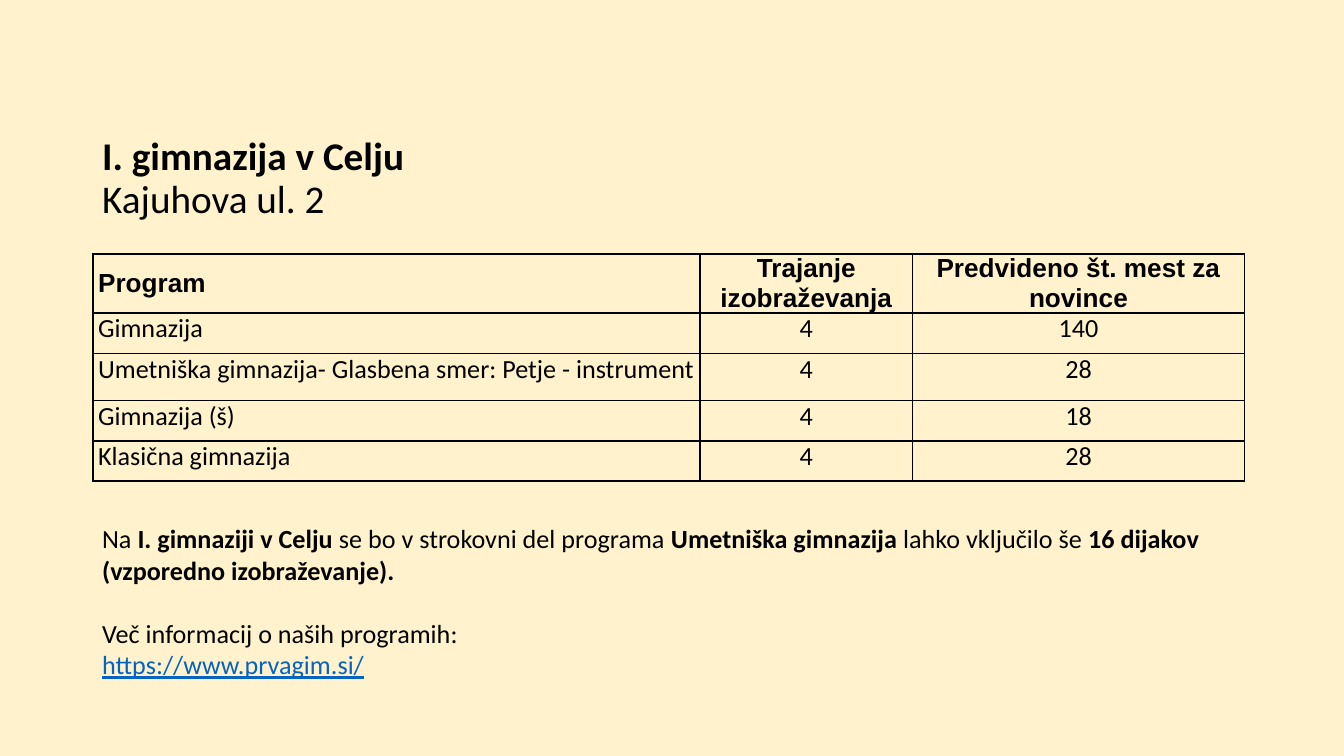
"""Build a slide listing the programmes and places of a grammar school."""
from lxml import etree
from pptx import Presentation
from pptx.dml.color import RGBColor
from pptx.enum.text import MSO_ANCHOR, MSO_AUTO_SIZE, PP_ALIGN
from pptx.oxml.ns import qn
from pptx.util import Inches, Pt

LEFT, CENTER = PP_ALIGN.LEFT, PP_ALIGN.CENTER
TOP, MIDDLE = MSO_ANCHOR.TOP, MSO_ANCHOR.MIDDLE
NO_AUTOFIT = MSO_AUTO_SIZE.NONE

COLORS = {"background": "FFF2CC", "text": "000000", "link": "0563C1"}
SLIDE_WIDTH = Inches(10)
SLIDE_HEIGHT = SLIDE_WIDTH * 9 // 16
BODY_SIZE = 14
COLUMN_WIDTHS = [4.52, 1.58, 2.47]
ROW_HEIGHTS = [0.44, 0.3, 0.35, 0.3, 0.3]
PROGRAMMES = [
    ("Program", "Trajanje izobraževanja", "Predvideno št. mest za novince"),
    ("Gimnazija", "4", "140"),
    ("Umetniška gimnazija- Glasbena smer: Petje - instrument", "4", "28"),
    ("Gimnazija (š)", "4", "18"),
    ("Klasična gimnazija", "4", "28"),
]
ENROLMENT = [
    ("Na ", False),
    ("I. gimnaziji v Celju", True),
    (" se bo v strokovni del programa ", False),
    ("Umetniška gimnazija", True),
    (" lahko vključilo še ", False),
    ("16 dijakov (vzporedno izobraževanje).", True),
]


def style_paragraph(paragraph, size=BODY_SIZE, font="Calibri", color="text", align=LEFT):
    paragraph.alignment = align
    paragraph.font.name = font
    paragraph.font.size = Pt(size)
    paragraph.font.color.rgb = RGBColor.from_string(COLORS[color])


def add_run(paragraph, text, bold=False):
    run = paragraph.add_run()
    run.text = text
    run.font.bold = bold
    return run


def set_frame(frame, anchor):
    frame.word_wrap = True
    frame.auto_size = NO_AUTOFIT
    frame.vertical_anchor = anchor
    frame.margin_left = frame.margin_right = Inches(0.07)
    frame.margin_top = frame.margin_bottom = Inches(0.04)


def add_title(slide):
    title = slide.shapes.title
    title.left, title.top = Inches(0.69), Inches(0.79)
    title.width, title.height = Inches(8.62), Inches(1.09)
    set_frame(title.text_frame, MIDDLE)
    heading = title.text_frame.paragraphs[0]
    style_paragraph(heading, size=21)
    heading.line_spacing = 0.9
    add_run(heading, "I. gimnazija v Celju", bold=True)
    heading.add_line_break()
    add_run(heading, "Kajuhova ul. 2")


def set_borders(cell):
    properties = cell._tc.get_or_add_tcPr()
    for position, side in enumerate(("lnL", "lnR", "lnT", "lnB")):
        line = etree.Element(qn(f"a:{side}"), w=str(Pt(1)))
        fill = etree.SubElement(line, qn("a:solidFill"))
        etree.SubElement(fill, qn("a:srgbClr"), val=COLORS["text"])
        properties.insert(position, line)


def fill_cell(cell, text, is_header, align):
    cell.fill.background()
    cell.margin_left = cell.margin_right = Inches(0.04)
    cell.margin_top = cell.margin_bottom = 0
    cell.vertical_anchor = MIDDLE if is_header else TOP
    entry = cell.text_frame.paragraphs[0]
    style_paragraph(entry, font="Arial" if is_header else "Calibri", align=align)
    add_run(entry, text, bold=is_header)
    set_borders(cell)


def add_programme_table(slide):
    table = slide.shapes.add_table(
        len(PROGRAMMES), len(COLUMN_WIDTHS), Inches(0.69), Inches(1.89),
        Inches(sum(COLUMN_WIDTHS)), Inches(sum(ROW_HEIGHTS))).table
    table.first_row = table.horz_banding = False
    for column, width in zip(table.columns, COLUMN_WIDTHS):
        column.width = Inches(width)
    for row_index, programme in enumerate(PROGRAMMES):
        table.rows[row_index].height = Inches(ROW_HEIGHTS[row_index])
        for column_index, text in enumerate(programme):
            fill_cell(table.cell(row_index, column_index), text,
                      row_index == 0, CENTER if column_index else LEFT)


def add_information(slide):
    frame = slide.shapes.add_textbox(
        Inches(0.69), Inches(3.85), Inches(8.57), Inches(0.76)).text_frame
    set_frame(frame, TOP)
    enrolment = frame.paragraphs[0]
    style_paragraph(enrolment)
    for text, bold in ENROLMENT:
        add_run(enrolment, text, bold)
    invitation = frame.add_paragraph()
    style_paragraph(invitation)
    invitation.space_before = Pt(17)
    add_run(invitation, "Več informacij o naših programih:")
    address = frame.add_paragraph()
    style_paragraph(address, color="link")
    add_run(address, "https://www.prvagim.si/").font.underline = True


def main():
    presentation = Presentation()
    presentation.slide_width = SLIDE_WIDTH
    presentation.slide_height = SLIDE_HEIGHT
    slide = presentation.slides.add_slide(presentation.slide_layouts[5])
    slide.background.fill.solid()
    slide.background.fill.fore_color.rgb = RGBColor.from_string(COLORS["background"])
    add_title(slide)
    add_programme_table(slide)
    add_information(slide)
    presentation.save("out.pptx")


if __name__ == "__main__":
    main()
